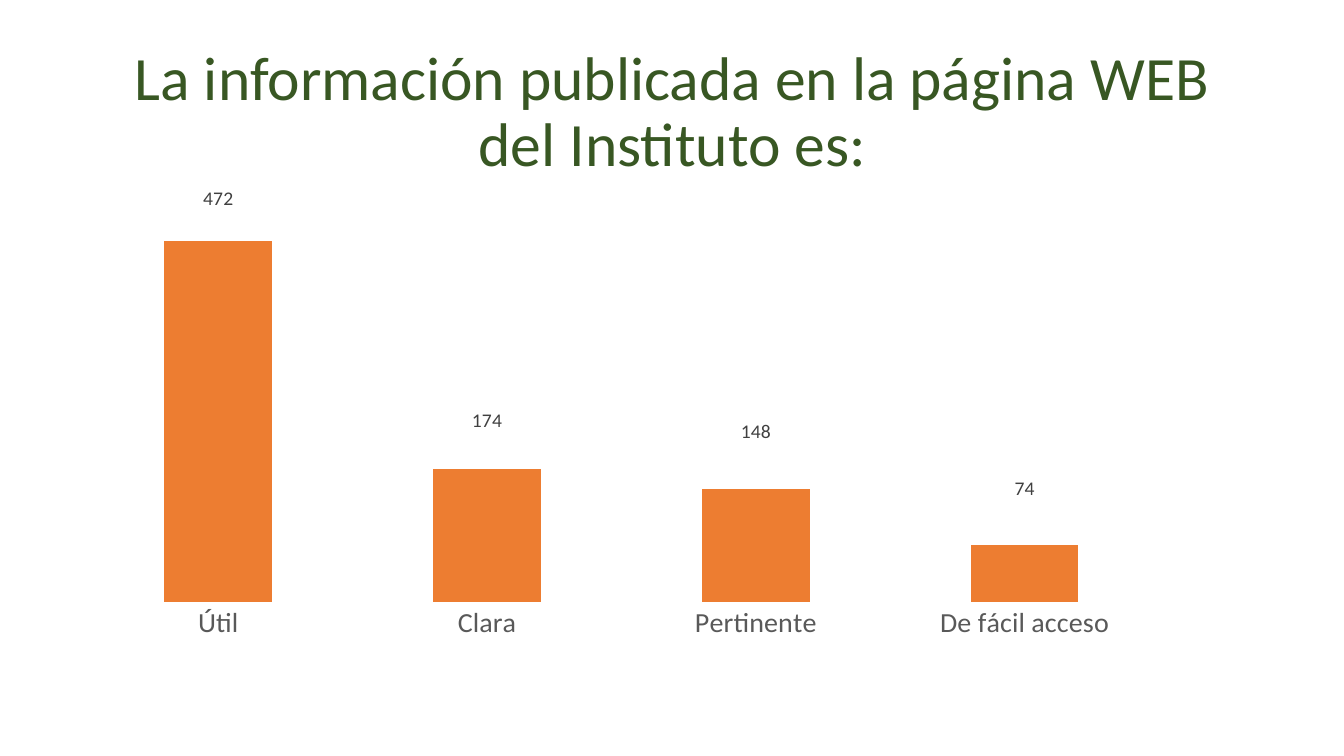
from lxml import etree
from pptx import Presentation
from pptx.chart.data import CategoryChartData
from pptx.dml.color import RGBColor
from pptx.enum.chart import XL_CHART_TYPE as ChartType
from pptx.enum.chart import XL_LABEL_POSITION as LabelPosition
from pptx.enum.chart import XL_TICK_LABEL_POSITION as TickLabels
from pptx.enum.chart import XL_TICK_MARK as TickMark
from pptx.enum.text import MSO_ANCHOR as Anchor
from pptx.enum.text import PP_ALIGN as Align
from pptx.oxml.ns import qn
from pptx.util import Inches, Pt

GREEN = RGBColor(0x38, 0x57, 0x23)
ORANGE = RGBColor(0xED, 0x7D, 0x31)
GREY = RGBColor(0x59, 0x59, 0x59)
DARK_GREY = RGBColor(0x40, 0x40, 0x40)
BLACK = RGBColor(0, 0, 0)

TITLE = "La información publicada en la página WEB del Instituto es:"
# Answer, votes, label lift as a share of the chart height
ANSWERS = [
    ("Útil", 472, 0.06),
    ("Clara", 174, 0.07),
    ("Pertinente", 148, 0.09),
    ("De fácil acceso", 74, 0.09),
]
PLOT_SHARES = {"x": 0.02, "y": 0.06, "w": 0.96, "h": 0.84}
LABEL_EXTENSION = "{CE6537A1-D6FC-4f65-9D91-7224C49458BB}"
CHART_2012 = "http://schemas.microsoft.com/office/drawing/2012/chart"


def set_font(font, size, color):
    for name, value in {"name": "Calibri", "size": Pt(size), "bold": False}.items():
        setattr(font, name, value)
    font.color.rgb = color


def manual_layout(values, inner=False):
    """Return a chart layout element with the given shares."""
    layout = etree.Element(qn("c:layout"))
    manual = etree.SubElement(layout, qn("c:manualLayout"))
    if inner:
        settings = {"layoutTarget": "inner", "xMode": "edge", "yMode": "edge"}
    else:
        settings = {}
    for tag, value in {**settings, **values}.items():
        etree.SubElement(manual, qn(f"c:{tag}")).set("val", str(value))
    return layout


def hide_leader_lines(chart):
    for node in chart.element.iter(qn("c:showLeaderLines")):
        node.set("val", "0")
    labels_node = chart.element.find(".//" + qn("c:ser") + "/" + qn("c:dLbls"))
    extensions = etree.SubElement(labels_node, qn("c:extLst"))
    extension = etree.SubElement(
        extensions, qn("c:ext"), nsmap={"c15": CHART_2012}, uri=LABEL_EXTENSION)
    etree.SubElement(extension, f"{{{CHART_2012}}}showLeaderLines", val="0")


def add_title(page, box):
    title = page.shapes.title
    title.left, title.top, title.width, title.height = map(Inches, box)
    frame = title.text_frame
    frame.text = TITLE
    frame.word_wrap = True
    frame.vertical_anchor = Anchor.MIDDLE
    para = frame.paragraphs[0]
    para.alignment = Align.CENTER
    para.line_spacing = 0.9
    set_font(para.runs[0].font, 44, GREEN)


def add_answers_chart(page, box):
    data = CategoryChartData()
    data.categories = [answer for answer, _, _ in ANSWERS]
    data.add_series("Series 1", [votes for _, votes, _ in ANSWERS])
    chart = page.shapes.add_chart(
        ChartType.COLUMN_CLUSTERED, *map(Inches, box), data).chart
    chart.has_legend = False
    chart.has_title = False
    set_font(chart.font, 10, BLACK)

    # Axes
    answer_axis = chart.category_axis
    answer_axis.major_tick_mark = TickMark.NONE
    answer_axis.tick_label_position = TickLabels.NEXT_TO_AXIS
    answer_axis.format.line.fill.background()
    set_font(answer_axis.tick_labels.font, 20, GREY)
    vote_axis = chart.value_axis
    vote_axis.minimum_scale, vote_axis.maximum_scale = 0, 500
    vote_axis.major_tick_mark = TickMark.NONE
    vote_axis.has_major_gridlines = False
    vote_axis.visible = False

    # Columns
    plot = chart.plots[0]
    plot.gap_width = 150
    plot.vary_by_categories = False
    series = plot.series[0]
    series.format.fill.solid()
    series.format.fill.fore_color.rgb = ORANGE

    # Value labels, lifted above their columns
    labels = series.data_labels
    labels.show_value = True
    labels.position = LabelPosition.OUTSIDE_END
    set_font(labels.font, 14, DARK_GREY)
    for index in range(len(ANSWERS)):
        label = series.points[index].data_label
        set_font(label.font, 14, DARK_GREY)
        label.position = LabelPosition.OUTSIDE_END
    label_nodes = chart.element.iter(qn("c:dLbl"))
    for node, (_, _, lift) in zip(label_nodes, ANSWERS):
        node.find(qn("c:idx")).addnext(manual_layout({"x": 0, "y": -lift}))
    hide_leader_lines(chart)

    # Plot area
    plot_area = chart.element.find(".//" + qn("c:plotArea"))
    for old in plot_area.findall(qn("c:layout")):
        plot_area.remove(old)
    plot_area.insert(0, manual_layout(PLOT_SHARES, inner=True))


def main():
    deck = Presentation()
    deck.slide_width, deck.slide_height = Inches(13.33), Inches(7.5)
    page = deck.slides.add_slide(deck.slide_layouts[5])
    add_title(page, (0.92, 0.4, 11.5, 1.45))
    add_answers_chart(page, (0.61, 1.85, 11.11, 4.57))
    deck.save("out.pptx")


if __name__ == "__main__":
    main()
